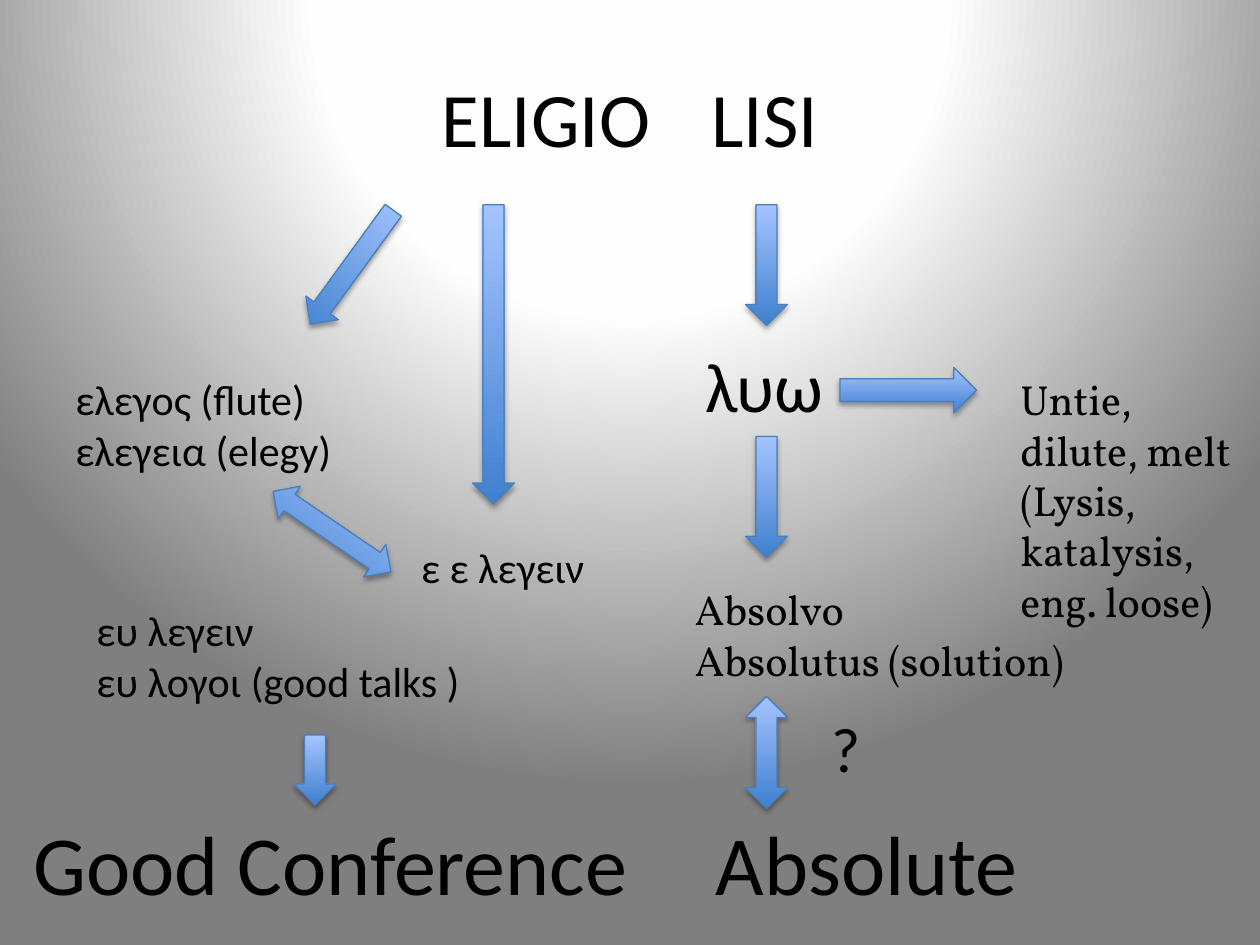
from lxml import etree
from pptx import Presentation
from pptx.dml.color import RGBColor
from pptx.enum import shapes, text
from pptx.oxml import parse_xml
from pptx.oxml.ns import nsdecls, qn
from pptx.util import Pt

BLACK = RGBColor(0x00, 0x00, 0x00)
DEEP_BLUE = RGBColor(0x3F, 0x80, 0xCE)
PALE_BLUE = RGBColor(0xA4, 0xC4, 0xFF)
EDGE_BLUE = RGBColor(0x4B, 0x7E, 0xBC)
WHITE = RGBColor(0xFF, 0xFF, 0xFF)
NEAR_WHITE = RGBColor(0xFE, 0xFE, 0xFE)
GREY = RGBColor(0x7F, 0x7F, 0x7F)

DOWN = shapes.MSO_SHAPE.DOWN_ARROW
RIGHT = shapes.MSO_SHAPE.RIGHT_ARROW
UP_DOWN = shapes.MSO_SHAPE.UP_DOWN_ARROW
LEFT_RIGHT = shapes.MSO_SHAPE.LEFT_RIGHT_ARROW

prs = Presentation()
prs.slide_width, prs.slide_height = Pt(720), Pt(540)
s = prs.slides.add_slide(prs.slide_layouts[6])

stops = "".join(
    f'<a:gs pos="{pos * 1000}"><a:srgbClr val="{color}"/></a:gs>'
    for pos, color in [(0, WHITE), (40, NEAR_WHITE), (100, GREY)]
)
s.background.fill.solid()
bg_pr = s.background._cSld.bg.bgPr
bg_pr.replace(bg_pr.find(qn("a:solidFill")), parse_xml(
    f'<a:gradFill {nsdecls("a")} rotWithShape="1"><a:gsLst>{stops}</a:gsLst>'
    '<a:path path="circle"><a:fillToRect l="50000" t="-80000" r="50000" b="180000"/>'
    '</a:path></a:gradFill>'))

arrows = [
    (DOWN, 426, 117, 24, 69, 0),
    (DOWN, 426, 249.5, 24, 69, 0),
    (RIGHT, 480, 210, 78, 26, 0),
    (UP_DOWN, 426, 398, 24, 64, 0),
    (DOWN, 189.5, 112.5, 23, 80.5, 36.1),
    (LEFT_RIGHT, 149, 292.5, 81.5, 22.5, 34.3),
    (DOWN, 270, 117, 24, 171, 0),
    (DOWN, 168, 420, 24, 40, 0),
]
for kind, left, top, width, height, angle in arrows:
    sp = s.shapes.add_shape(kind, Pt(left), Pt(top), Pt(width), Pt(height))
    sp.rotation = angle
    sp.fill.gradient()
    sp.fill.gradient_angle = 90
    for stop, color in zip(sp.fill.gradient_stops, (DEEP_BLUE, PALE_BLUE)):
        stop.color.rgb = color
    sp.line.color.rgb = EDGE_BLUE
    sp.line.width = Pt(0.75)
    sp.shadow.inherit = False
    effects = sp._element.spPr.find(qn("a:effectLst"))
    shadow = etree.SubElement(effects, qn("a:outerShdw"), blurRad=str(Pt(3.1)),
                              dist=str(Pt(1.8)), dir="5400000", rotWithShape="0")
    tint = etree.SubElement(shadow, qn("a:srgbClr"), val=str(BLACK))
    etree.SubElement(tint, qn("a:alpha"), val="35000")

labels = [
    (36, 21.6, 648, 90, 44, "Calibri", ["ELIGIO\t LISI"]),
    (396, 192, 138, 55.5, 40, "Calibri", ["λυω"]),
    (576, 210, 144, 152.5, 24, "Vollkorn",
     ["Untie, dilute, melt", "(Lysis, katalysis, eng. loose)"]),
    (390, 330, 258, 65.5, 24, "Vollkorn", ["Absolvo", "Absolutus (solution)"]),
    (468, 402, 30, 51, 36, "Calibri", ["?"]),
    (402, 460, 222, 65.5, 48, "Calibri", ["Absolute"]),
    (36, 210, 180, 65.5, 24, "Calibri", ["ελεγος (flute)", "ελεγεια (elegy)"]),
    (233.5, 306, 150.5, 36, 24, "Calibri", ["ε ε λεγειν"]),
    (48, 342, 246, 65.5, 24, "Calibri", ["ευ λεγειν", "ευ λογοι (good talks )"]),
    (12, 460, 450, 65.5, 48, "Calibri", ["Good Conference"]),
]
boxes = []
for left, top, width, height, size, font, lines in labels:
    sp = s.shapes.add_textbox(Pt(left), Pt(top), Pt(width), Pt(height))
    boxes.append(sp)
    tf = sp.text_frame
    tf.word_wrap = True
    tf.auto_size = text.MSO_AUTO_SIZE.SHAPE_TO_FIT_TEXT
    for i, line in enumerate(lines):
        p = tf.add_paragraph() if i else tf.paragraphs[0]
        r = p.add_run()
        r.text = line
        r.font.name = font
        r.font.size = Pt(size)
        r.font.color.rgb = BLACK

title = boxes[0].text_frame
title.auto_size = text.MSO_AUTO_SIZE.NONE
title.vertical_anchor = text.MSO_ANCHOR.MIDDLE
title.paragraphs[0].alignment = text.PP_ALIGN.CENTER

prs.save("out.pptx")
